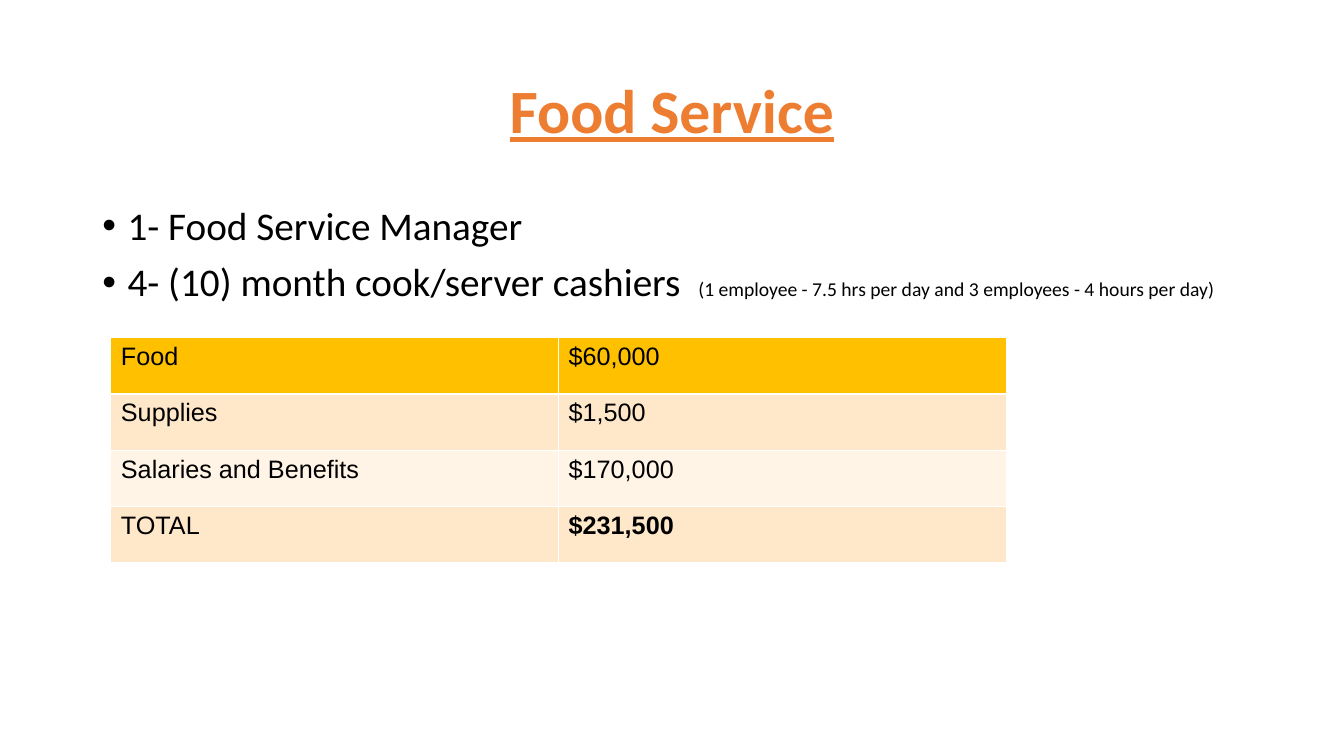
from dataclasses import dataclass

from lxml import etree
from pptx import Presentation
from pptx import util as u
from pptx.dml.color import RGBColor
from pptx.enum import text
from pptx.oxml import ns

COLUMNS, ROWS = 160, 90


@dataclass(frozen=True)
class Theme:
    accent: str = "ED7D31"
    ink: str = "000000"
    header: str = "FFC000"
    bands: tuple = ("FFE8CA", "FFF4E6")
    body_font: str = "Calibri"
    table_font: str = "Arial"
    title_size: int = 44
    bullet_size: int = 28
    table_size: int = 18
    note_size: int = 14


THEME = Theme()

STAFF = [
    [("1- Food Service Manager", THEME.bullet_size)],
    [
        ("4- (10) month cook/server cashiers  ", THEME.bullet_size),
        ("(1 employee - 7.5 hrs per day and 3 employees - 4 hours per day)", THEME.note_size),
    ],
]
BUDGET = [
    ("Food", "$60,000"),
    ("Supplies", "$1,500"),
    ("Salaries and Benefits", "$170,000"),
    ("TOTAL", "$231,500"),
]


def grid_box(prs, left, top, width, height):
    column, row = prs.slide_width / COLUMNS, prs.slide_height / ROWS
    return [u.Emu(round(n)) for n in (left * column, top * row, width * column, height * row)]


def add_text(paragraph, wording, size, font=THEME.body_font, color=THEME.ink,
             bold=False, underline=False):
    run = paragraph.add_run()
    run.text = wording
    run.font.size = u.Pt(size)
    run.font.name = font
    run.font.color.rgb = RGBColor.from_string(color)
    run.font.bold = bold
    run.font.underline = underline


def add_frame(slide, box, anchor):
    frame = slide.shapes.add_textbox(*box).text_frame
    frame.word_wrap = True
    frame.vertical_anchor = anchor
    return frame


def add_bullet(paragraph):
    props = paragraph._p.get_or_add_pPr()
    props.set("marL", str(u.Inches(0.25)))
    props.set("indent", str(u.Inches(-0.25)))
    color = etree.SubElement(props, ns.qn("a:buClr"))
    etree.SubElement(color, ns.qn("a:srgbClr"), val=THEME.ink)
    etree.SubElement(props, ns.qn("a:buFont"), typeface=THEME.table_font)
    etree.SubElement(props, ns.qn("a:buChar"), char="•")


def add_title(slide, box):
    heading = add_frame(slide, box, text.MSO_ANCHOR.MIDDLE).paragraphs[0]
    heading.alignment = text.PP_ALIGN.CENTER
    heading.line_spacing = 0.9
    add_text(heading, "Food Service", THEME.title_size, color=THEME.accent,
             bold=True, underline=True)


def add_staff(slide, box):
    frame = add_frame(slide, box, text.MSO_ANCHOR.TOP)
    for index, parts in enumerate(STAFF):
        position = frame.add_paragraph() if index else frame.paragraphs[0]
        position.line_spacing = 0.9
        position.space_before = u.Pt(10 if index else 0)
        add_bullet(position)
        for wording, size in parts:
            add_text(position, wording, size)


def add_budget(slide, box):
    budget = slide.shapes.add_table(len(BUDGET), len(BUDGET[0]), *box).table
    for row, entries in enumerate(BUDGET):
        fill = THEME.bands[(row - 1) % 2] if row else THEME.header
        for column, entry in enumerate(entries):
            cell = budget.cell(row, column)
            cell.fill.solid()
            cell.fill.fore_color.rgb = RGBColor.from_string(fill)
            is_sum = row == len(BUDGET) - 1 and column == 1
            add_text(cell.text_frame.paragraphs[0], entry, THEME.table_size,
                     font=THEME.table_font, bold=is_sum)


def main():
    prs = Presentation()
    prs.slide_width, prs.slide_height = u.Inches(13.33), u.Inches(7.5)
    slide = prs.slides.add_slide(prs.slide_layouts[6])
    add_title(slide, grid_box(prs, 11, 4.8, 138, 17.4))
    add_staff(slide, grid_box(prs, 11, 24, 138, 57.1))
    add_budget(slide, grid_box(prs, 13.2, 40.2, 106.6, 26.8))
    prs.save("out.pptx")


if __name__ == "__main__":
    main()
